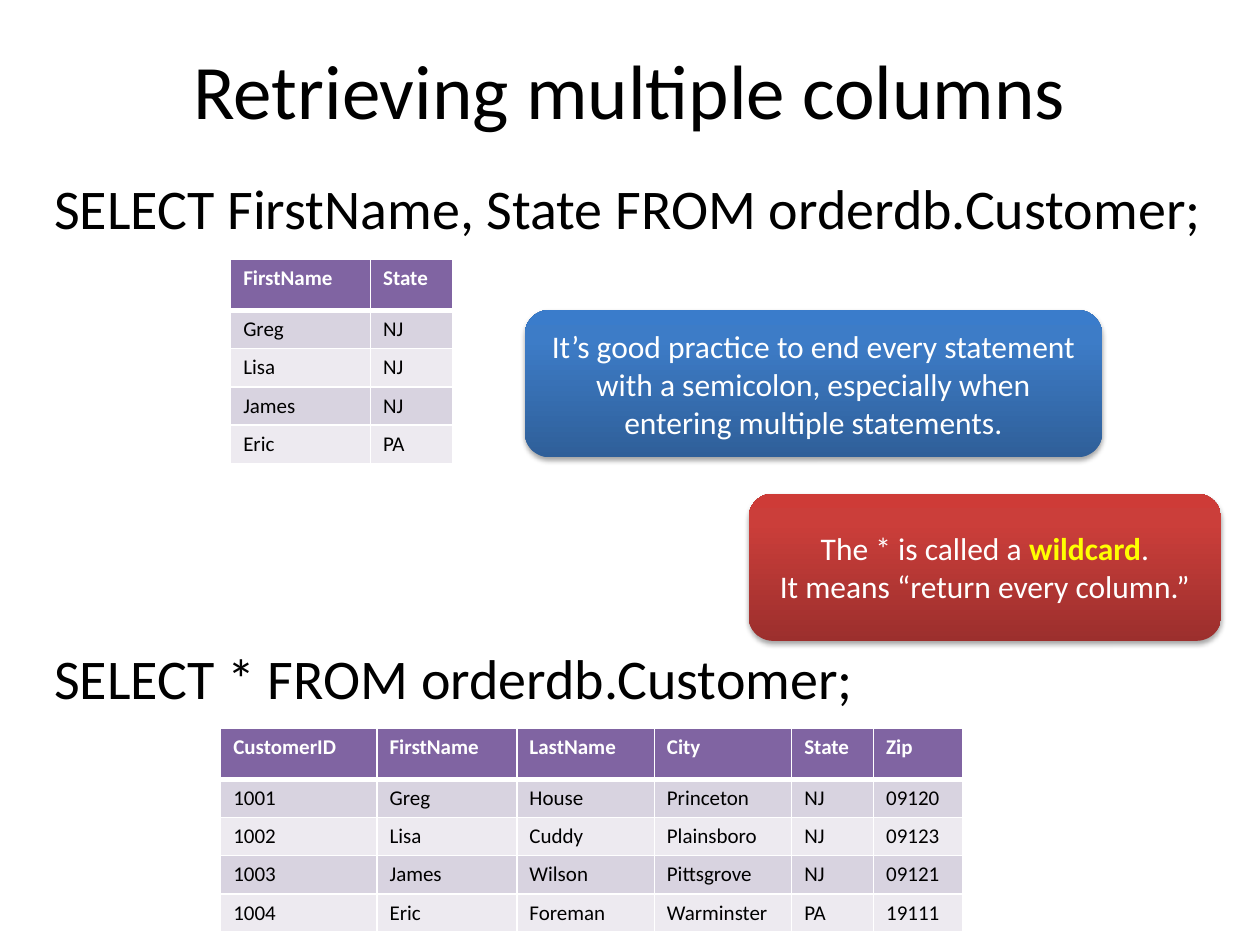
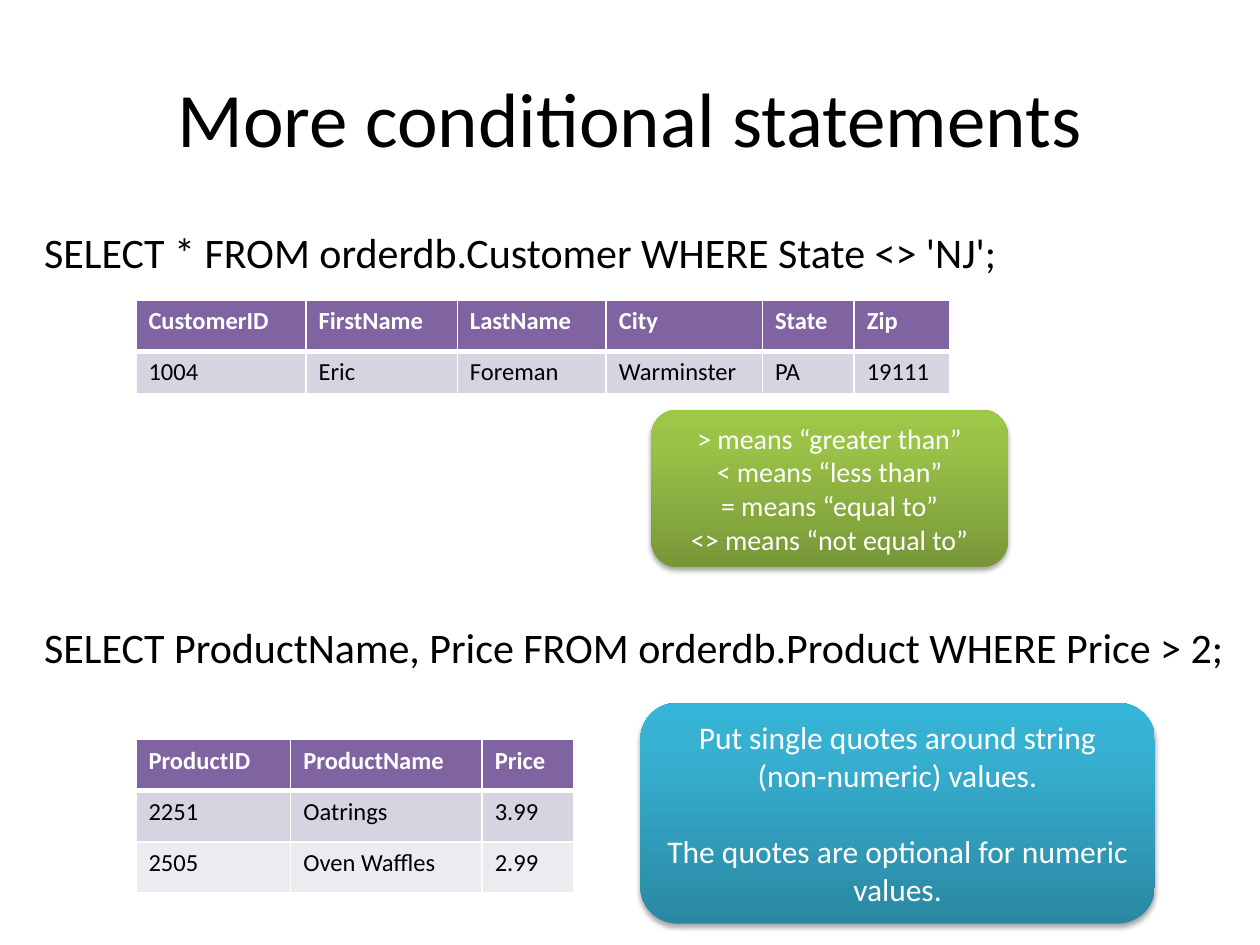
from copy import deepcopy
from dataclasses import dataclass

from lxml.etree import SubElement
from pptx import Presentation
from pptx.dml.color import RGBColor as Rgb
from pptx.enum.shapes import MSO_SHAPE as Shape
from pptx.enum.text import MSO_ANCHOR as Anchor, PP_ALIGN as Align
from pptx.oxml.ns import qn
from pptx.util import Cm, Pt


@dataclass(frozen=True)
class Theme:
    font: str = "Calibri"
    ink: str = "000000"
    white: str = "FFFFFF"
    highlight: str = "FFFF00"
    header: str = "8064A2"
    bands: tuple = ("D8D3E0", "EDEAF0")
    # Callout gradients run from the bottom edge to the top edge
    blue: tuple = ("2F5F99", "3D7CC7", "3A7CCB")
    red: tuple = ("9C2F2D", "CB3E3A", "CE3B37")
    green: tuple = ("779737", "9BC348", "9DC746")
    teal: tuple = ("2A88A2", "37B1D2", "34B4D6")
    gradient_positions: tuple = (0, 0.8, 1)
    title_size: int = 44
    callout_size: int = 18
    thin_line: int = 1
    thick_line: int = 3


@dataclass(frozen=True)
class Box:
    """Left, top, width and height in centimetres."""
    left: float
    top: float
    width: float
    height: float

    def lengths(self):
        return [Cm(n) for n in (self.left, self.top, self.width, self.height)]


THEME = Theme()
HEADER_HEIGHT = 1.03

CUSTOMER_COLUMNS = ("CustomerID", "FirstName", "LastName", "City", "State", "Zip")
CUSTOMERS = [
    ("1001", "Greg", "House", "Princeton", "NJ", "09120"),
    ("1002", "Lisa", "Cuddy", "Plainsboro", "NJ", "09123"),
    ("1003", "James", "Wilson", "Pittsgrove", "NJ", "09121"),
    ("1004", "Eric", "Foreman", "Warminster", "PA", "19111"),
]
FIRST_NAME, STATE = (CUSTOMER_COLUMNS.index(name) for name in ("FirstName", "State"))
PRODUCT_COLUMNS = ("ProductID", "ProductName", "Price")
PRODUCTS = [("2251", "Oatrings", "3.99"), ("2505", "Oven Waffles", "2.99")]


def format_runs(paragraph, size, color, bold=False):
    for run in paragraph.runs:
        run.font.name = THEME.font
        run.font.size = Pt(size)
        run.font.bold = bold
        run.font.color.rgb = Rgb.from_string(color)


def add_text(slide, box, text, size, align=Align.LEFT, anchor=Anchor.TOP):
    text_frame = slide.shapes.add_textbox(*box.lengths()).text_frame
    text_frame.word_wrap = True
    text_frame.vertical_anchor = anchor
    text_frame.text = text
    paragraph = text_frame.paragraphs[0]
    paragraph.alignment = align
    format_runs(paragraph, size, THEME.ink)


def add_title(slide, top, text):
    box = Box(1.27, top, 22.86, 3.18)
    add_text(slide, box, text, THEME.title_size, Align.CENTER, Anchor.MIDDLE)


def add_queries(slide, box, queries, step, size):
    """Stack the SQL statements, each one step below the last."""
    for index, query in enumerate(queries):
        place = Box(box.left, box.top + index * step, box.width, box.height)
        add_text(slide, place, query, size)


def set_borders(cell, top, bottom):
    properties = cell._tc.get_or_add_tcPr()
    thin = THEME.thin_line
    for side, width in (("L", thin), ("R", thin), ("T", top), ("B", bottom)):
        line = SubElement(properties, qn(f"a:ln{side}"), w=str(Pt(width)))
        fill = SubElement(line, qn("a:solidFill"))
        SubElement(fill, qn("a:srgbClr"), val=THEME.white)


def add_result_table(slide, left, top, columns, rows, widths, row_height, size):
    box = Box(left, top, sum(widths), HEADER_HEIGHT + row_height * len(rows))
    table = slide.shapes.add_table(len(rows) + 1, len(columns), *box.lengths()).table
    for column, width in zip(table.columns, widths):
        column.width = Cm(width)
    for row_index, values in enumerate([columns, *rows]):
        is_header = row_index == 0
        table.rows[row_index].height = Cm(HEADER_HEIGHT if is_header else row_height)
        fill = THEME.header if is_header else THEME.bands[(row_index - 1) % 2]
        for column_index, value in enumerate(values):
            cell = table.cell(row_index, column_index)
            # The rule under the header is thick
            set_borders(cell,
                        THEME.thick_line if row_index == 1 else THEME.thin_line,
                        THEME.thick_line if is_header else THEME.thin_line)
            cell.fill.solid()
            cell.fill.fore_color.rgb = Rgb.from_string(fill)
            cell.text_frame.text = value
            format_runs(cell.text_frame.paragraphs[0], size,
                        THEME.white if is_header else THEME.ink, is_header)


def fill_gradient(shape, colors):
    shape.fill.gradient()
    shape.fill.gradient_angle = 90
    stop_list = shape._element.spPr.find(".//" + qn("a:gsLst"))
    stop_list.append(deepcopy(stop_list[-1]))
    stops = shape.fill.gradient_stops
    for stop, color, position in zip(stops, colors, THEME.gradient_positions):
        stop.color.rgb = Rgb.from_string(color)
        stop.position = position


def add_soft_shadow(shape):
    shape.shadow.inherit = False
    effects = shape._element.spPr.find(qn("a:effectLst"))
    shadow = SubElement(effects, qn("a:outerShdw"), blurRad=str(Pt(3.1)),
                        dist=str(Pt(1.8)), dir="5400000", rotWithShape="0")
    color = SubElement(shadow, qn("a:srgbClr"), val=THEME.ink)
    SubElement(color, qn("a:alpha"), val="35000")


def add_callout(slide, box, lines, colors, size=THEME.callout_size,
                gap=0, keyword=None):
    shape = slide.shapes.add_shape(Shape.ROUNDED_RECTANGLE, *box.lengths())
    fill_gradient(shape, colors)
    shape.line.fill.background()
    add_soft_shadow(shape)
    text_frame = shape.text_frame
    text_frame.word_wrap = True
    text_frame.vertical_anchor = Anchor.MIDDLE
    text_frame.text = "\n".join(lines)
    for index, paragraph in enumerate(text_frame.paragraphs):
        paragraph.alignment = Align.CENTER
        paragraph.space_before = Pt(gap if index else 0)
        # Split the line so that the keyword gets its own run
        has_keyword = keyword and keyword in paragraph.text
        if has_keyword:
            before, word, after = paragraph.text.partition(keyword)
            paragraph.text = before
            for part in (word, after):
                paragraph.add_run().text = part
        format_runs(paragraph, size, THEME.white)
        if has_keyword:
            font = paragraph.runs[1].font
            font.bold = True
            font.color.rgb = Rgb.from_string(THEME.highlight)


def build_columns_slide(slide):
    add_title(slide, 0.2, "Retrieving multiple columns")
    add_queries(slide, Box(0.84, 3.38, 23.7, 1.6),
                ["SELECT FirstName, State FROM orderdb.Customer;",
                 "SELECT * FROM orderdb.Customer;"], step=9.47, size=32)

    # Query results
    def pick(row):
        return row[FIRST_NAME], row[STATE]

    add_result_table(slide, 4.65, 5.23, pick(CUSTOMER_COLUMNS),
                     [pick(row) for row in CUSTOMERS], (2.82, 1.65), 0.77, 12)
    add_result_table(slide, 4.45, 14.68, CUSTOMER_COLUMNS, CUSTOMERS,
                     (3.15, 2.82, 2.77, 2.77, 1.65, 1.8), 0.77, 12)

    # Callouts
    add_callout(slide, Box(15.09, 9.95, 9.53, 2.97),
                ["The * is called a wildcard.", "It means “return every column.”"],
                THEME.red, keyword="wildcard")
    add_callout(slide, Box(10.58, 6.25, 11.64, 2.97),
                ["It’s good practice to end every statement with a semicolon, "
                 "especially when entering multiple statements."], THEME.blue)


def build_conditions_slide(slide):
    add_title(slide, 0.76, "More conditional statements")
    add_queries(slide, Box(0.64, 4.45, 24.34, 1.3),
                ["SELECT * FROM orderdb.Customer WHERE State <> 'NJ';",
                 "SELECT ProductName, Price FROM orderdb.Product WHERE Price > 2;"],
                step=7.96, size=24)

    # Query results
    add_result_table(slide, 2.74, 6.05, CUSTOMER_COLUMNS,
                     [row for row in CUSTOMERS if row[STATE] != "NJ"],
                     (3.43, 3.05, 3, 3.15, 1.85, 1.93), 0.86, 14)
    add_result_table(slide, 2.74, 14.91, PRODUCT_COLUMNS, PRODUCTS,
                     (3.12, 3.86, 1.85), HEADER_HEIGHT, 14)

    # Callouts
    add_callout(slide, Box(12.91, 14.17, 10.37, 4.45),
                ["Put single quotes around string (non-numeric) values.",
                 "The quotes are optional for numeric values."], THEME.teal, gap=22)
    add_callout(slide, Box(13.13, 8.26, 7.19, 3.18),
                ["> means “greater than”", "< means “less than”",
                 "= means “equal to”", "<> means “not equal to”"],
                THEME.green, size=16)


def main():
    presentation = Presentation()
    presentation.slide_width, presentation.slide_height = Cm(25.4), Cm(19.05)
    blank_layout = presentation.slide_layouts[6]
    for build in (build_columns_slide, build_conditions_slide):
        build(presentation.slides.add_slide(blank_layout))
    presentation.save("out.pptx")


if __name__ == "__main__":
    main()
